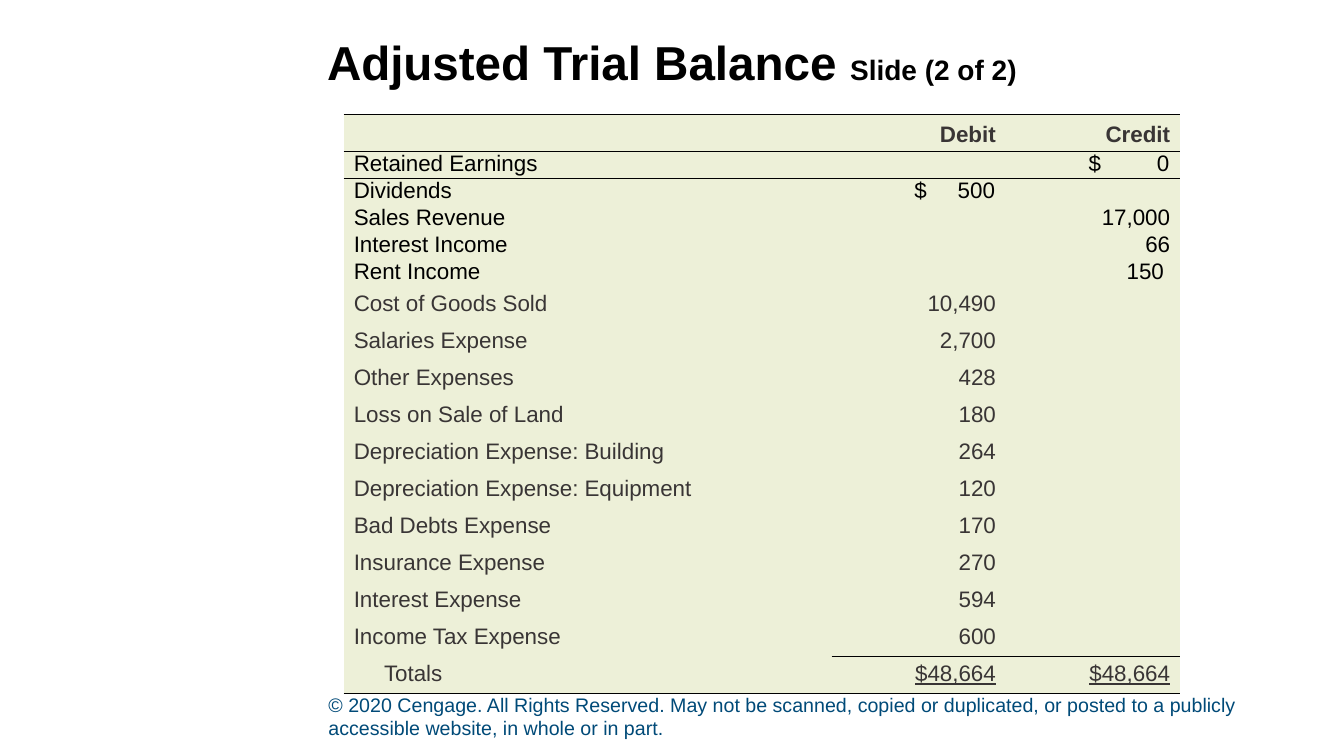
from dataclasses import dataclass

from lxml.etree import SubElement
from pptx import Presentation
from pptx.dml.color import RGBColor
from pptx.enum.text import MSO_ANCHOR as Anchor, PP_ALIGN as Align
from pptx.oxml.ns import qn
from pptx.slide import Slide
from pptx.table import _Cell as Cell
from pptx.text.text import Font, _Paragraph as Paragraph
from pptx.util import Pt

BLACK = "000000"
CHARCOAL = "393535"
NAVY = "004A78"
PALE_GREEN = "EDF0D8"
COLUMN_WIDTHS = (348.5, 124.5, 124.5)
TALL_ROW, COMPACT_ROW = 26.25, 19.15
DOLLAR_TAB, AMOUNT_TAB = 52, 109.5


@dataclass(frozen=True)
class Account:
    name: str
    debit: str = ""
    credit: str = ""
    compact: bool = False
    bold: bool = False
    total: bool = False


@dataclass(frozen=True)
class Phrase:
    text: str
    size: float
    color: str
    bold: bool = False


@dataclass(frozen=True)
class Caption:
    left: float
    top: float
    width: float
    height: float
    anchor: Anchor
    align: Align
    line_spacing: float
    phrases: tuple[Phrase, ...]


ACCOUNTS = (
    Account("", "Debit", "Credit", bold=True),
    Account("Retained Earnings", credit="\t$\t0", compact=True),
    Account("Dividends", "\t$\t500", compact=True),
    Account("Sales Revenue", credit="17,000", compact=True),
    Account("Interest Income", credit="66", compact=True),
    Account("Rent Income", credit="150 ", compact=True),
    Account("Cost of Goods Sold", "10,490"),
    Account("Salaries Expense", "2,700"),
    Account("Other Expenses", "428"),
    Account("Loss on Sale of Land", "180"),
    Account("Depreciation Expense: Building", "264"),
    Account("Depreciation Expense: Equipment", "120"),
    Account("Bad Debts Expense", "170"),
    Account("Insurance Expense", "270"),
    Account("Interest Expense", "594"),
    Account("Income Tax Expense", "600"),
    Account("Totals", "$48,664", "$48,664", total=True),
)

RULED_COLUMNS = {
    0: (0, 1, 2),
    1: (0, 1, 2),
    len(ACCOUNTS) - 1: (1, 2),
    len(ACCOUNTS): (0, 1, 2),
}

CAPTIONS = (
    Caption(227.5, 496, 693.5, 36, Anchor.BOTTOM, Align.LEFT, 1.0, (
        Phrase("© 2020 Cengage. All Rights Reserved. May not be scanned, copied or "
               "duplicated, or posted to a publicly accessible website, in whole or "
               "in part.", 14, NAVY),
    )),
    Caption(66, 10.8, 828, 72, Anchor.MIDDLE, Align.CENTER, 0.9, (
        Phrase("Adjusted Trial Balance ", 34, BLACK, True),
        Phrase("Slide (2 of 2)", 20, BLACK, True),
    )),
)


def rgb(code: str) -> RGBColor:
    return RGBColor.from_string(code)


def style_font(font: Font, size: float, color: str, bold: bool) -> None:
    font.name = "Arial"
    font.size = Pt(size)
    font.bold = bold
    font.color.rgb = rgb(color)


def draw_caption(slide: Slide, caption: Caption) -> None:
    box = slide.shapes.add_textbox(
        Pt(caption.left), Pt(caption.top), Pt(caption.width), Pt(caption.height))
    frame = box.text_frame
    frame.word_wrap = True
    frame.vertical_anchor = caption.anchor
    paragraph = frame.paragraphs[0]
    paragraph.alignment = caption.align
    paragraph.line_spacing = caption.line_spacing
    for phrase in caption.phrases:
        run = paragraph.add_run()
        run.text = phrase.text
        style_font(run.font, phrase.size, phrase.color, phrase.bold)


def draw_rule(cell: Cell, side: str) -> None:
    rule = SubElement(cell._tc.get_or_add_tcPr(), qn(f"a:{side}"), w=str(Pt(1)))
    SubElement(SubElement(rule, qn("a:solidFill")), qn("a:srgbClr"), val=BLACK)


def add_amount_tabs(paragraph: Paragraph) -> None:
    tabs = SubElement(paragraph._p.get_or_add_pPr(), qn("a:tabLst"))
    for position, align in ((DOLLAR_TAB, "l"), (AMOUNT_TAB, "r")):
        SubElement(tabs, qn("a:tab"), pos=str(Pt(position)), algn=align)


def fill_cell(cell: Cell, text: str, account: Account, is_amount: bool) -> None:
    cell.fill.solid()
    cell.fill.fore_color.rgb = rgb(PALE_GREEN)
    cell.margin_left = cell.margin_right = Pt(7.2)
    cell.margin_top = cell.margin_bottom = Pt(0 if account.compact else 3.6)
    cell.vertical_anchor = Anchor.BOTTOM if account.bold else Anchor.TOP
    paragraph = cell.text_frame.paragraphs[0]
    if not text:
        SubElement(paragraph._p, qn("a:endParaRPr"), sz="1600")
        return
    paragraph.text = text
    if "\t" in text:
        add_amount_tabs(paragraph)
    elif is_amount:
        paragraph.alignment = Align.RIGHT
    elif account.total:
        paragraph._p.get_or_add_pPr().set("marL", str(Pt(21.6)))
    font = paragraph.runs[0].font
    style_font(font, 16, BLACK if account.compact else CHARCOAL, account.bold)
    font.underline = account.total and is_amount


def draw_trial_balance(slide: Slide) -> None:
    heights = [COMPACT_ROW if account.compact else TALL_ROW for account in ACCOUNTS]
    frame = slide.shapes.add_table(
        len(ACCOUNTS), len(COLUMN_WIDTHS),
        Pt(245.5), Pt(82), Pt(sum(COLUMN_WIDTHS)), Pt(sum(heights)))
    balance = frame.table
    balance.first_row = balance.horz_banding = False
    for style in frame.element.iter(qn("a:tableStyleId")):
        style.text = "{2D5ABB26-0587-4C30-8999-92F81FD0307C}"
    for column, width in zip(balance.columns, COLUMN_WIDTHS):
        column.width = Pt(width)
    for row_index, (account, height) in enumerate(zip(ACCOUNTS, heights)):
        balance.rows[row_index].height = Pt(height)
        for column_index, text in enumerate((account.name, account.debit, account.credit)):
            cell = balance.cell(row_index, column_index)
            for side, edge in (("lnT", row_index), ("lnB", row_index + 1)):
                if column_index in RULED_COLUMNS.get(edge, ()):
                    draw_rule(cell, side)
            fill_cell(cell, text, account, column_index > 0)


def main() -> None:
    deck = Presentation()
    deck.slide_width, deck.slide_height = Pt(960), Pt(540)
    slide = deck.slides.add_slide(deck.slide_layouts[6])
    for caption in CAPTIONS:
        draw_caption(slide, caption)
    draw_trial_balance(slide)
    deck.save("out.pptx")


if __name__ == "__main__":
    main()
